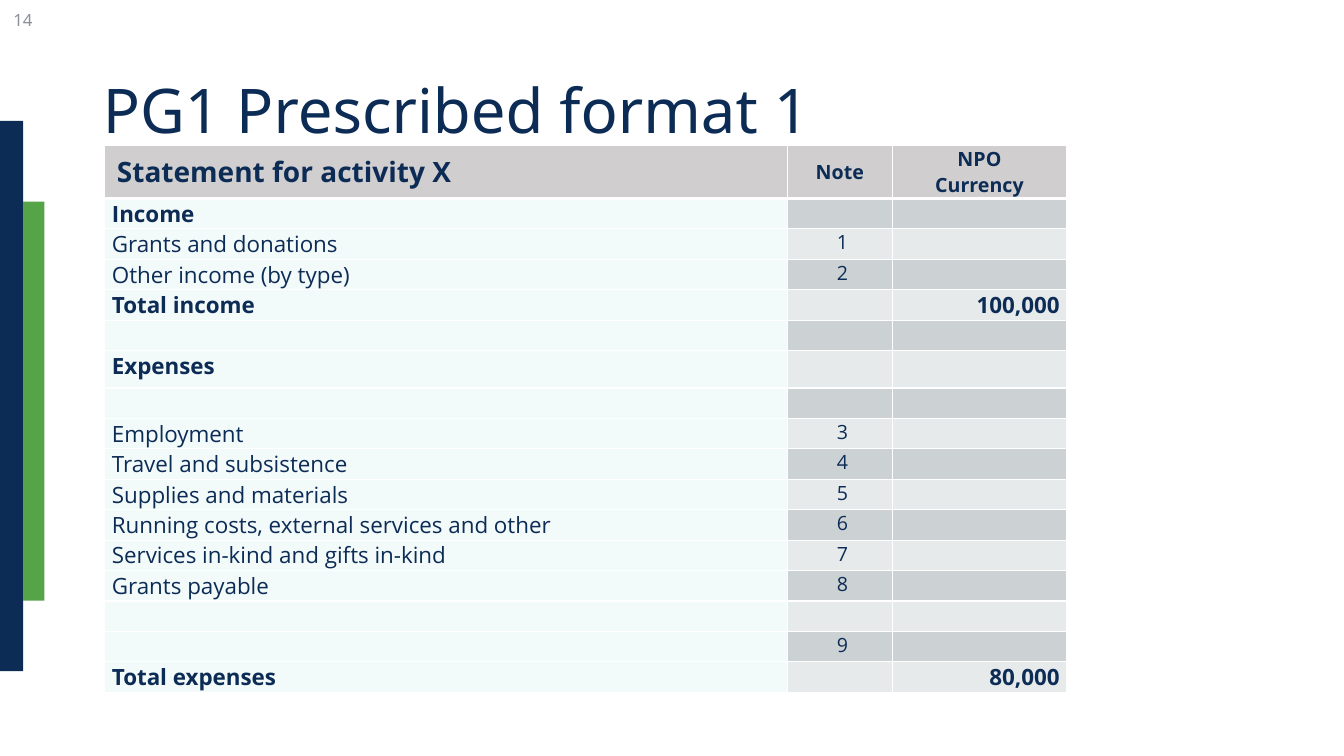
from dataclasses import dataclass

import pptx
import pptx.dml.color
import pptx.enum.shapes
import pptx.enum.text
import pptx.oxml.ns
import pptx.util
from lxml import etree

Inches = pptx.util.Inches
Align = pptx.enum.text.PP_ALIGN
Anchor = pptx.enum.text.MSO_ANCHOR
qn = pptx.oxml.ns.qn


@dataclass(frozen=True)
class Theme:
    navy: str = "0C2C56"
    green: str = "56A448"
    grey: str = "8C8F9A"
    white: str = "FFFFFF"
    header: str = "D0CECE"
    label: str = "8DCFD6"
    bands: tuple = ("CCD2D4", "E7EAEB")
    heading_font: str = "Noto Sans"
    table_font: str = "Open Sans"
    title_size: int = 44
    header_size: int = 20
    body_size: int = 16
    note_size: int = 14
    number_size: int = 12
    line_height: float = 1.36


THEME = Theme()

# Label, note, amount, bold
ROWS = [
    ("Income", "", "", True),
    ("Grants and donations", "1", "", False),
    ("Other income (by type)", "2", "", False),
    ("Total income", "", "100,000", True),
    ("", "", "", False),
    ("Expenses", "", "", True),
    ("", "", "", False),
    ("Employment", "3", "", False),
    ("Travel and subsistence", "4", "", False),
    ("Supplies and materials", "5", "", False),
    ("Running costs, external services and other", "6", "", False),
    ("Services in-kind and gifts in-kind", "7", "", False),
    ("Grants payable", "8", "", False),
    ("", "", "", False),
    ("", "9", "", False),
    ("Total expenses", "", "80,000", True),
]


def rgb(color):
    return pptx.dml.color.RGBColor.from_string(color)


def write(frame, text, size, font=THEME.heading_font, color=THEME.navy,
          bold=False, align=Align.LEFT, spacing=None):
    for index, line in enumerate(text.split("\n")):
        para = frame.paragraphs[0] if index == 0 else frame.add_paragraph()
        para.alignment = align
        if spacing:
            para.line_spacing = spacing
        if line:
            span = para.add_run()
            span.text = line
            span.font.size = pptx.util.Pt(size)
            span.font.name = font
            span.font.bold = bold
            span.font.color.rgb = rgb(color)
        else:
            # An empty line still sets the height of its row
            etree.SubElement(para._p, qn("a:endParaRPr"), sz=str(size * 100))


def add_bar(page, left, top, width, height, color):
    bar = page.shapes.add_shape(pptx.enum.shapes.MSO_SHAPE.RECTANGLE,
                                Inches(left), Inches(top), Inches(width), Inches(height))
    bar.shadow.inherit = False
    bar.fill.solid()
    bar.fill.fore_color.rgb = rgb(color)
    bar.line.fill.background()


def add_side_bars(page, left, top):
    add_bar(page, left, top, 0.23, 5.46, THEME.navy)
    add_bar(page, left + 0.23, top + 0.8, 0.21, 3.96, THEME.green)


def add_title(page, left, top, width, height):
    title = page.shapes.title
    title.left, title.top = Inches(left), Inches(top)
    title.width, title.height = Inches(width), Inches(height)
    title.text_frame.vertical_anchor = Anchor.MIDDLE
    write(title.text_frame, "PG1 Prescribed format 1", THEME.title_size, spacing=0.9)


def add_page_number(page, left, top, width, height):
    box = page.shapes.add_textbox(Inches(left), Inches(top), Inches(width), Inches(height))
    box.text_frame.word_wrap = True
    box.text_frame.vertical_anchor = Anchor.MIDDLE
    write(box.text_frame, "14", THEME.number_size, color=THEME.grey, align=Align.RIGHT)


def style_cell(cell, fill, alpha=None, bottom=1, indent=0.07, anchor=Anchor.TOP):
    cell.margin_left, cell.margin_right = Inches(indent), Inches(0.07)
    cell.margin_top = cell.margin_bottom = 0
    cell.vertical_anchor = anchor
    properties = cell._tc.get_or_add_tcPr()
    for side, width in (("lnL", 1), ("lnR", 1), ("lnT", 1), ("lnB", bottom)):
        line = etree.SubElement(properties, qn(f"a:{side}"), w=str(pptx.util.Pt(width)))
        paint = etree.SubElement(line, qn("a:solidFill"))
        etree.SubElement(paint, qn("a:srgbClr"), val=THEME.white)
    cell.fill.solid()
    cell.fill.fore_color.rgb = rgb(fill)
    if alpha is not None:
        color = properties.find(qn("a:solidFill")).find(qn("a:srgbClr"))
        etree.SubElement(color, qn("a:alpha"), val=str(alpha * 1000))


def add_statement(page, left, top):
    widths = [Inches(width) for width in (6.77, 1.04, 1.73)]
    # Rows are as high as their text; the expenses heading has more room
    body_height = pptx.util.Pt(THEME.body_size * THEME.line_height)
    heights = [pptx.util.Pt(2 * THEME.note_size * THEME.line_height)]
    heights += [Inches(0.37) if row[0] == "Expenses" else body_height for row in ROWS]
    table = page.shapes.add_table(len(heights), len(widths), Inches(left), Inches(top),
                                  sum(widths), sum(heights)).table
    table.first_row = table.horz_banding = False
    for column, width in zip(table.columns, widths):
        column.width = width
    for row, height in zip(table.rows, heights):
        row.height = height

    # Header row
    headers = [
        ("Statement for activity X", THEME.header_size, Align.LEFT, 0.12),
        ("Note", THEME.note_size, Align.CENTER, 0.07),
        ("NPO\nCurrency", THEME.note_size, Align.CENTER, 0.07),
    ]
    for column, (text, size, align, indent) in enumerate(headers):
        cell = table.cell(0, column)
        style_cell(cell, THEME.header, bottom=3, indent=indent, anchor=Anchor.MIDDLE)
        write(cell.text_frame, text, size, THEME.table_font, bold=True, align=align)

    # Body rows
    for index, (label, note, amount, bold) in enumerate(ROWS):
        band = THEME.bands[index % 2]
        columns = [
            (label, THEME.body_size, Align.LEFT, THEME.label, 10, 0.07),
            (note, THEME.note_size, Align.CENTER, band, None, 0.12),
            (amount, THEME.body_size, Align.RIGHT, band, None, 0.07),
        ]
        for column, (text, size, align, fill, alpha, indent) in enumerate(columns):
            cell = table.cell(index + 1, column)
            style_cell(cell, fill, alpha, indent=indent)
            write(cell.text_frame, text, size, THEME.table_font, bold=bold, align=align)


def main():
    deck = pptx.Presentation()
    deck.slide_width, deck.slide_height = Inches(13.33), Inches(7.5)
    page = deck.slides.add_slide(deck.slide_layouts[5])
    add_side_bars(page, 0, 1.2)
    add_title(page, 0.92, 0.4, 11.5, 1.45)
    add_page_number(page, 0, 0, 0.42, 0.4)
    add_statement(page, 1.04, 1.44)
    deck.save("out.pptx")


if __name__ == "__main__":
    main()
